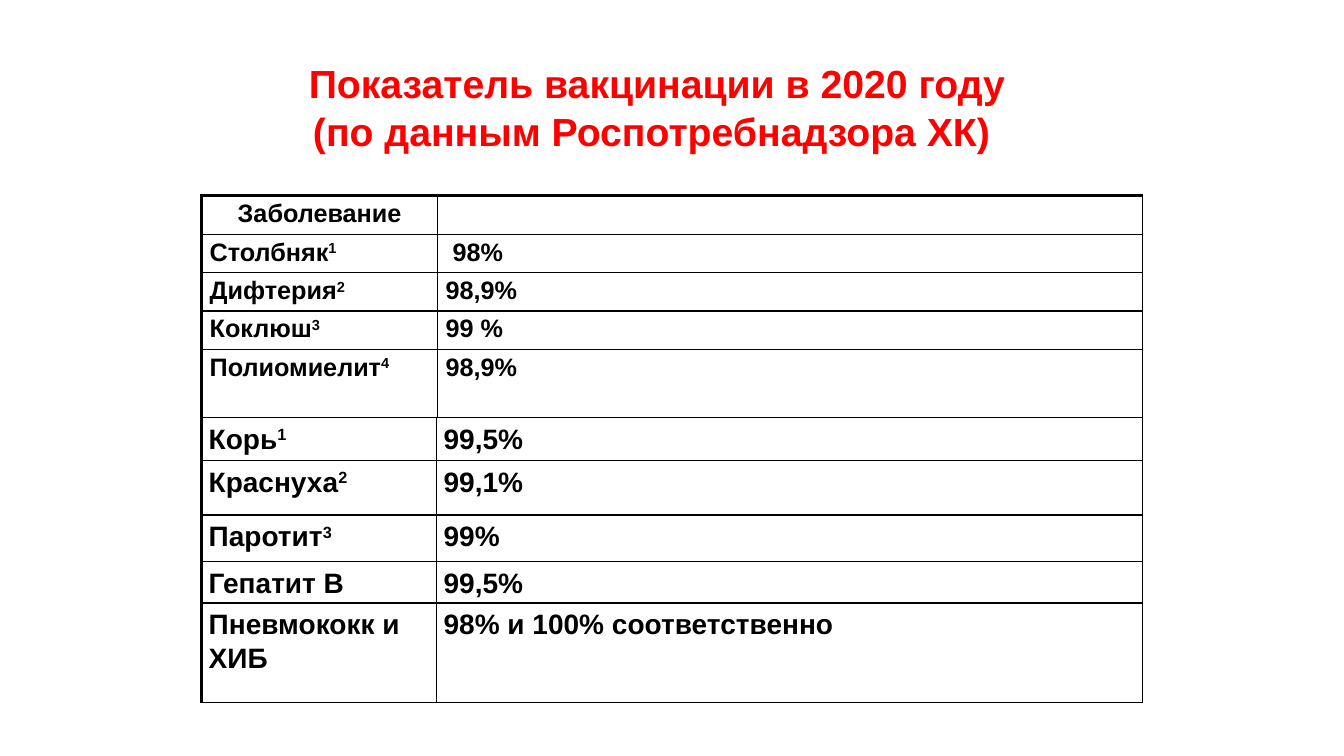
"""Build the slide on 2020 vaccination rates."""
from dataclasses import dataclass

from pptx import Presentation
from pptx import util as u
from pptx.dml.color import RGBColor
from pptx.enum import text
from pptx.oxml import parse_xml
from pptx.oxml.ns import nsdecls

RED = RGBColor(0xFF, 0x00, 0x00)
BLACK = RGBColor(0x00, 0x00, 0x00)
FONT = "Arial"
THIN, THICK = 1, 2.25


@dataclass
class Row:
    disease: str
    rate: str
    height: float
    note: str = ""
    align: text.PP_ALIGN = text.PP_ALIGN.LEFT


@dataclass
class RateTable:
    top: float
    widths: tuple[float, float]
    size: float
    inset: float
    rows: list[Row]
    top_line: float = THIN
    spacing: float | None = None


TABLES = [
    RateTable(1.94, (2.34, 6.99), 18, 0.08, [
        Row("Заболевание", "", 0.38, align=text.PP_ALIGN.CENTER),
        Row("Столбняк", " 98%", 0.38, "1"),
        Row("Дифтерия", "98,9%", 0.38, "2"),
        Row("Коклюш", "99 %", 0.38, "3"),
        Row("Полиомиелит", "98,9%", 0.68, "4"),
    ], top_line=THICK),
    RateTable(4.14, (2.33, 7), 20, 0.07, [
        Row("Корь", "99,5%", 0.43, "1"),
        Row("Краснуха", "99,1%", 0.54, "2"),
        Row("Паротит", "99%", 0.46, "3"),
        Row("Гепатит В", "99,5%", 0.41),
        Row("Пневмококк и ХИБ", "98% и 100% соответственно", 0.99),
    ], spacing=24),
]


def add_text(p, content: str, *, size: float, color: RGBColor = BLACK,
             superscript: bool = False) -> None:
    r = p.add_run()
    r.text = content
    r.font.name, r.font.size, r.font.bold = FONT, u.Pt(size), True
    r.font.color.rgb = color
    if superscript:
        r._r.get_or_add_rPr().set("baseline", "30000")


def set_borders(cell, left: float, top: float) -> None:
    tc_pr = cell._tc.get_or_add_tcPr()
    for side, width in (("L", left), ("R", THIN), ("T", top), ("B", THIN)):
        tc_pr.append(parse_xml(
            f'<a:ln{side} {nsdecls("a")} w="{u.Pt(width)}"><a:solidFill>'
            f'<a:srgbClr val="{BLACK}"/></a:solidFill></a:ln{side}>'))


def add_title(s) -> None:
    sp = s.shapes.title
    sp.left, sp.top = u.Inches(1.39), u.Inches(0.6)
    sp.width, sp.height = u.Inches(10.25), u.Inches(0.92)
    tf = sp.text_frame
    tf.word_wrap = True
    tf.auto_size = text.MSO_AUTO_SIZE.NONE
    tf.vertical_anchor = text.MSO_ANCHOR.MIDDLE
    p = tf.paragraphs[0]
    p.alignment = text.PP_ALIGN.CENTER
    add_text(p, "Показатель вакцинации в 2020 году", size=28, color=RED)
    p.add_line_break()
    add_text(p, "(по данным Роспотребнадзора ХК) ", size=28, color=RED)


def add_rate_table(s, rates: RateTable) -> None:
    height = sum(row.height for row in rates.rows)
    table = s.shapes.add_table(
        len(rates.rows), 2, u.Inches(2), u.Inches(rates.top),
        u.Inches(sum(rates.widths)), u.Inches(height)).table
    table.first_row = table.horz_banding = False
    for column, width in zip(table.columns, rates.widths):
        column.width = u.Inches(width)
    for i, row in enumerate(rates.rows):
        table.rows[i].height = u.Inches(row.height)
        for j, content in enumerate((row.disease, row.rate)):
            cell = table.cell(i, j)
            cell.margin_left = cell.margin_right = u.Inches(rates.inset)
            cell.margin_top = cell.margin_bottom = u.Inches(0.04)
            set_borders(cell, THIN if j else THICK, THIN if i else rates.top_line)
            cell.fill.background()
            p = cell.text_frame.paragraphs[0]
            p.alignment = row.align
            if rates.spacing:
                p.line_spacing = u.Pt(rates.spacing)
            if content:
                add_text(p, content, size=rates.size)
            if row.note and j == 0:
                add_text(p, row.note, size=rates.size, superscript=True)


def main() -> None:
    prs = Presentation()
    prs.slide_width, prs.slide_height = u.Inches(13.33), u.Inches(7.5)
    s = prs.slides.add_slide(prs.slide_layouts[5])
    add_title(s)
    for rates in TABLES:
        add_rate_table(s, rates)
    prs.save("out.pptx")


if __name__ == "__main__":
    main()
